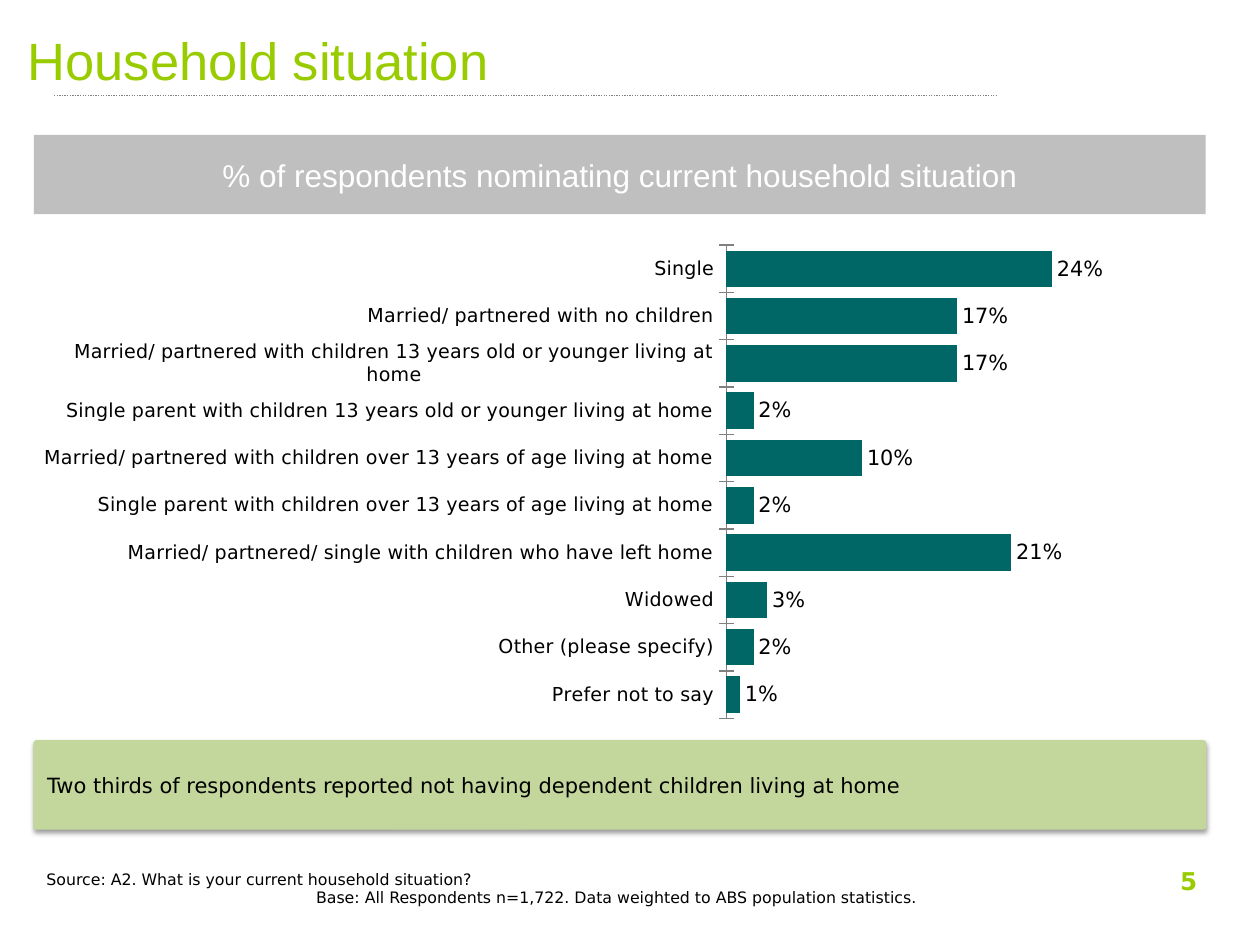
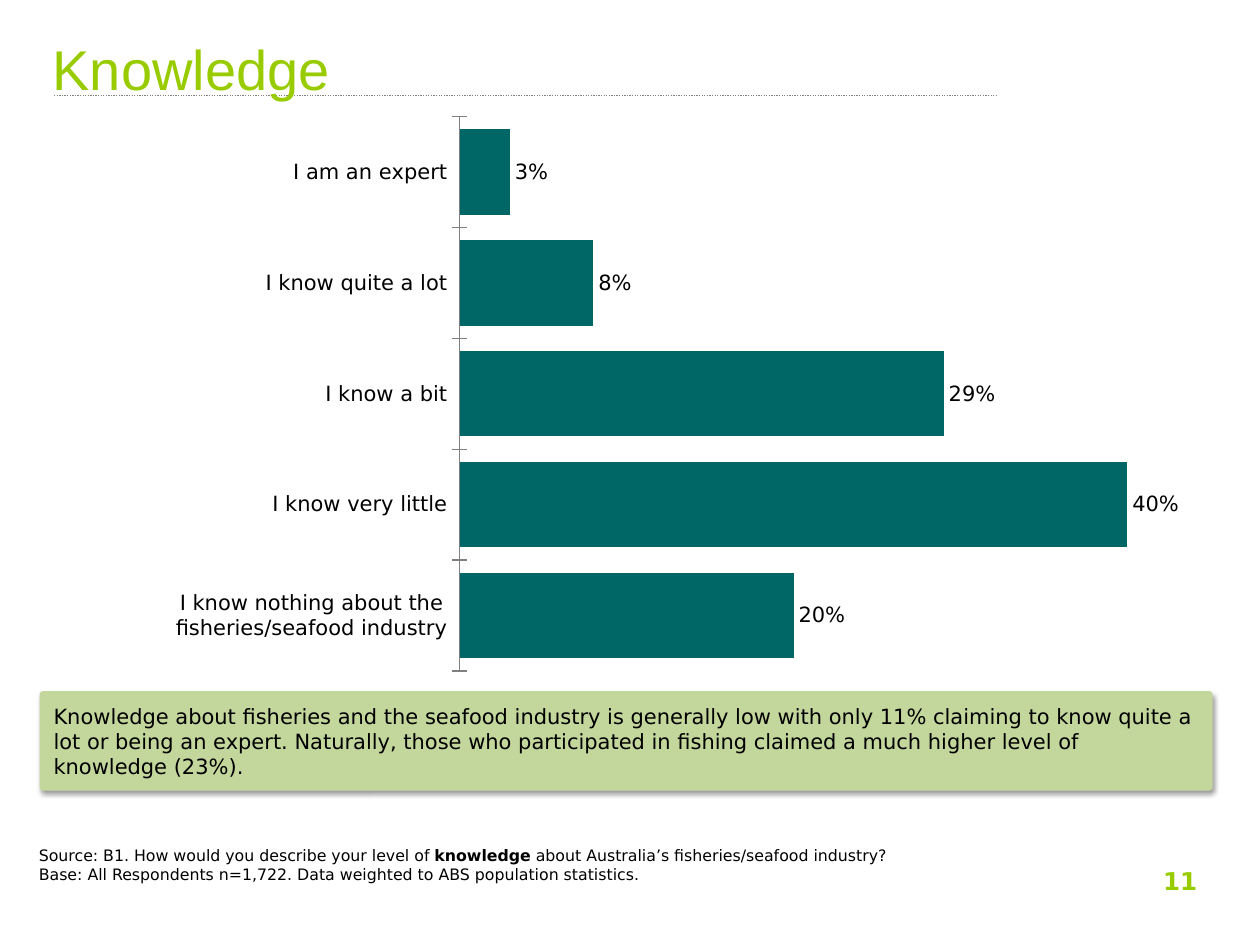
from dataclasses import dataclass
from typing import Optional

import pptx
import pptx.chart.data
import pptx.dml.color
import pptx.enum.chart
import pptx.enum.dml
import pptx.enum.shapes
import pptx.enum.text
import pptx.oxml
import pptx.oxml.ns
import pptx.util
from lxml import etree

Inches = pptx.util.Inches
Pt = pptx.util.Pt
qn = pptx.oxml.ns.qn
Align = pptx.enum.text.PP_ALIGN
Anchor = pptx.enum.text.MSO_ANCHOR
ShapeType = pptx.enum.shapes.MSO_SHAPE

LIME = "99CC00"
TEAL = "006666"
PALE_GREEN = "C3D69B"
SILVER = "BFBFBF"
GREY = "808080"
BLACK = "000000"
WHITE = "FFFFFF"
HEADING_FONT = "Arial"
BODY_FONT = "DejaVu Sans"
CONTENT_WIDTH = 9.3
BASE_NOTE = "Base: All Respondents n=1,722. Data weighted to ABS population statistics."


@dataclass(frozen=True)
class Box:
    left: float
    top: float
    width: float
    height: float

    def lengths(self) -> tuple:
        return tuple(Inches(side) for side in (self.left, self.top, self.width, self.height))


@dataclass(frozen=True)
class TextStyle:
    size: float
    color: str = BLACK
    font: str = BODY_FONT
    bold: bool = False
    align: Align = Align.LEFT
    anchor: Anchor = Anchor.TOP


@dataclass(frozen=True)
class Run:
    text: str
    bold: bool = False


@dataclass(frozen=True)
class Paragraph:
    runs: tuple[Run, ...]
    indent: float = 0


@dataclass(frozen=True)
class BarChart:
    box: Box
    plot: Box
    values: dict[str, float]
    axis_maximum: float
    category_size: float


@dataclass(frozen=True)
class SurveySlide:
    number: int
    title: str
    title_box: Box
    title_size: float
    chart: BarChart
    callout: str
    callout_box: Box
    source: tuple[Paragraph, ...]
    source_box: Box
    banner: Optional[str] = None


SURVEY_SLIDES = (
    SurveySlide(
        number=5,
        title="Household situation",
        title_box=Box(0.12, 0.13, 7.88, 0.69),
        title_size=30,
        chart=BarChart(
            box=Box(0.35, 1.94, CONTENT_WIDTH, 3.91),
            plot=Box(0.578, 0, 0.351, 0.962),
            values={
                "Single": 0.24,
                "Married/ partnered with no children": 0.17,
                "Married/ partnered with children 13 years old or younger living at home": 0.17,
                "Single parent with children 13 years old or younger living at home": 0.02,
                "Married/ partnered with children over 13 years of age living at home": 0.1,
                "Single parent with children over 13 years of age living at home": 0.02,
                "Married/ partnered/ single with children who have left home": 0.21,
                "Widowed": 0.03,
                "Other (please specify)": 0.02,
                "Prefer not to say": 0.01,
            },
            axis_maximum=0.3,
            category_size=11,
        ),
        callout="Two thirds of respondents reported not having dependent children living at home",
        callout_box=Box(0.27, 5.88, CONTENT_WIDTH, 0.7),
        source=(
            Paragraph((Run("Source: A2. What is your current household situation?"),)),
            Paragraph((Run(BASE_NOTE),), indent=2.14),
        ),
        source_box=Box(0.27, 6.85, 8.28, 0.6),
        banner="% of respondents nominating current household situation",
    ),
    SurveySlide(
        number=11,
        title="Knowledge",
        title_box=Box(0.32, 0.09, 7.34, 0.9),
        title_size=32,
        chart=BarChart(
            box=Box(0.32, 0.92, CONTENT_WIDTH, 4.58),
            plot=Box(0.358, 0, 0.641, 0.962),
            values={
                "I am an expert": 0.03,
                "I know quite a lot": 0.08,
                "I know a bit": 0.29,
                "I know very little": 0.4,
                "I know nothing about the fisheries/seafood industry": 0.2,
            },
            axis_maximum=0.45,
            category_size=12,
        ),
        callout=(
            "Knowledge about fisheries and the seafood industry is generally low with only 11% "
            "claiming to know quite a lot or being an expert. Naturally, those who participated "
            "in fishing claimed a much higher level of knowledge (23%)."
        ),
        callout_box=Box(0.32, 5.49, CONTENT_WIDTH, 0.78),
        source=(
            Paragraph((
                Run("Source: B1. How would you describe your level of "),
                Run("knowledge", bold=True),
                Run(" about Australia’s fisheries/seafood industry?"),
            )),
            Paragraph((Run(BASE_NOTE),)),
        ),
        source_box=Box(0.21, 6.66, 8.28, 0.6),
    ),
)


def rgb(color: str) -> pptx.dml.color.RGBColor:
    return pptx.dml.color.RGBColor.from_string(color)


def style_font(font, size: float, color: str, name: str, bold: bool = False) -> None:
    font.size = Pt(size)
    font.name = name
    font.bold = bold
    font.color.rgb = rgb(color)


def write_text(shape, paragraphs: tuple[Paragraph, ...], style: TextStyle) -> None:
    frame = shape.text_frame
    frame.word_wrap = True
    frame.vertical_anchor = style.anchor
    for index, content in enumerate(paragraphs):
        paragraph = frame.add_paragraph() if index else frame.paragraphs[0]
        paragraph.alignment = style.align
        if content.indent:
            paragraph._p.get_or_add_pPr().set("marL", str(Inches(content.indent)))
        for part in content.runs:
            run = paragraph.add_run()
            run.text = part.text
            style_font(run.font, style.size, style.color, style.font, style.bold or part.bold)


def plain(text: str) -> tuple[Paragraph, ...]:
    return (Paragraph((Run(text),)),)


def add_text(slide, box: Box, paragraphs: tuple[Paragraph, ...], style: TextStyle) -> None:
    write_text(slide.shapes.add_textbox(*box.lengths()), paragraphs, style)


def add_panel(slide, kind: ShapeType, box: Box, fill: str, text: str, style: TextStyle):
    shape = slide.shapes.add_shape(kind, *box.lengths())
    shape.shadow.inherit = False
    shape.fill.solid()
    shape.fill.fore_color.rgb = rgb(fill)
    shape.line.fill.background()
    write_text(shape, plain(text), style)
    return shape


def add_callout(slide, box: Box, text: str) -> None:
    style = TextStyle(12, anchor=Anchor.MIDDLE)
    shape = add_panel(slide, ShapeType.ROUNDED_RECTANGLE, box, PALE_GREEN, text, style)
    shape.adjustments[0] = 0.03
    shape.line.color.rgb = rgb(PALE_GREEN)
    shape.line.width = Pt(0.75)
    effects = shape.element.spPr.find(qn("a:effectLst"))
    shadow = etree.SubElement(
        effects, qn("a:outerShdw"), blurRad=str(Pt(3.1)), dist=str(Pt(1.6)),
        dir="5400000", rotWithShape="0",
    )
    color = etree.SubElement(shadow, qn("a:srgbClr"), val=BLACK)
    etree.SubElement(color, qn("a:alpha"), val="38000")


def add_title_rule(slide) -> None:
    rule = slide.shapes.add_connector(
        pptx.enum.shapes.MSO_CONNECTOR.STRAIGHT,
        Inches(0.43), Inches(0.76), Inches(7.91), Inches(0.76),
    )
    rule.line.color.rgb = rgb(GREY)
    rule.line.width = Pt(0.75)
    rule.line.dash_style = pptx.enum.dml.MSO_LINE.ROUND_DOT
    etree.SubElement(rule.element.find(qn("p:spPr")), qn("a:effectLst"))


def place_plot(chart, plot: Box) -> None:
    plot_area = chart.element.find(".//" + qn("c:plotArea"))
    for layout in plot_area.findall(qn("c:layout")):
        plot_area.remove(layout)
    layout = etree.Element(qn("c:layout"))
    plot_area.insert(0, layout)
    manual = etree.SubElement(layout, qn("c:manualLayout"))
    settings = {
        "layoutTarget": "inner", "xMode": "edge", "yMode": "edge",
        "x": plot.left, "y": plot.top, "w": plot.width, "h": plot.height,
    }
    for name, value in settings.items():
        etree.SubElement(manual, qn(f"c:{name}"), val=str(value))


def add_bar_chart(slide, content: BarChart) -> None:
    data = pptx.chart.data.CategoryChartData(number_format="0%")
    data.categories = list(content.values)
    data.add_series("Series 1", list(content.values.values()))
    chart = slide.shapes.add_chart(
        pptx.enum.chart.XL_CHART_TYPE.BAR_CLUSTERED, *content.box.lengths(), data
    ).chart
    chart.has_title = False
    chart.has_legend = False
    style_font(chart.font, 18, BLACK, BODY_FONT)
    place_plot(chart, content.plot)

    category_axis = chart.category_axis
    category_axis.reverse_order = True
    category_axis.major_tick_mark = pptx.enum.chart.XL_TICK_MARK.CROSS
    category_axis.format.line.color.rgb = rgb(GREY)
    category_axis.format.line.width = Pt(0.75)
    style_font(category_axis.tick_labels.font, content.category_size, BLACK, BODY_FONT)

    value_axis = chart.value_axis
    value_axis.visible = False
    value_axis.has_major_gridlines = False
    value_axis.minimum_scale = 0
    value_axis.maximum_scale = content.axis_maximum

    bars = chart.plots[0]
    bars.gap_width = 30
    bars.vary_by_categories = False
    bars.series[0].format.fill.solid()
    bars.series[0].format.fill.fore_color.rgb = rgb(TEAL)
    bars.has_data_labels = True
    labels = bars.data_labels
    labels.show_value = True
    labels.number_format = "0%"
    labels.number_format_is_linked = False
    labels.position = pptx.enum.chart.XL_LABEL_POSITION.OUTSIDE_END
    style_font(labels.font, 12, BLACK, BODY_FONT)


def add_survey_slide(presentation, content: SurveySlide) -> None:
    slide = presentation.slides.add_slide(presentation.slide_layouts[6])
    add_title_rule(slide)
    add_text(slide, Box(7.27, 6.82, 2.33, 0.52), plain(str(content.number)),
             TextStyle(14, LIME, bold=True, align=Align.RIGHT))
    add_text(slide, content.source_box, content.source, TextStyle(9))
    add_callout(slide, content.callout_box, content.callout)
    add_bar_chart(slide, content.chart)
    if content.banner:
        add_panel(slide, ShapeType.RECTANGLE, Box(0.27, 1.07, CONTENT_WIDTH, 0.63), SILVER,
                  content.banner,
                  TextStyle(18, WHITE, HEADING_FONT, align=Align.CENTER, anchor=Anchor.MIDDLE))
    add_text(slide, content.title_box, plain(content.title),
             TextStyle(content.title_size, LIME, HEADING_FONT, anchor=Anchor.MIDDLE))


def main() -> None:
    presentation = pptx.Presentation()
    presentation.slide_width = Inches(10)
    presentation.slide_height = Inches(7.5)
    for content in SURVEY_SLIDES:
        add_survey_slide(presentation, content)
    presentation.save("out.pptx")


if __name__ == "__main__":
    main()
